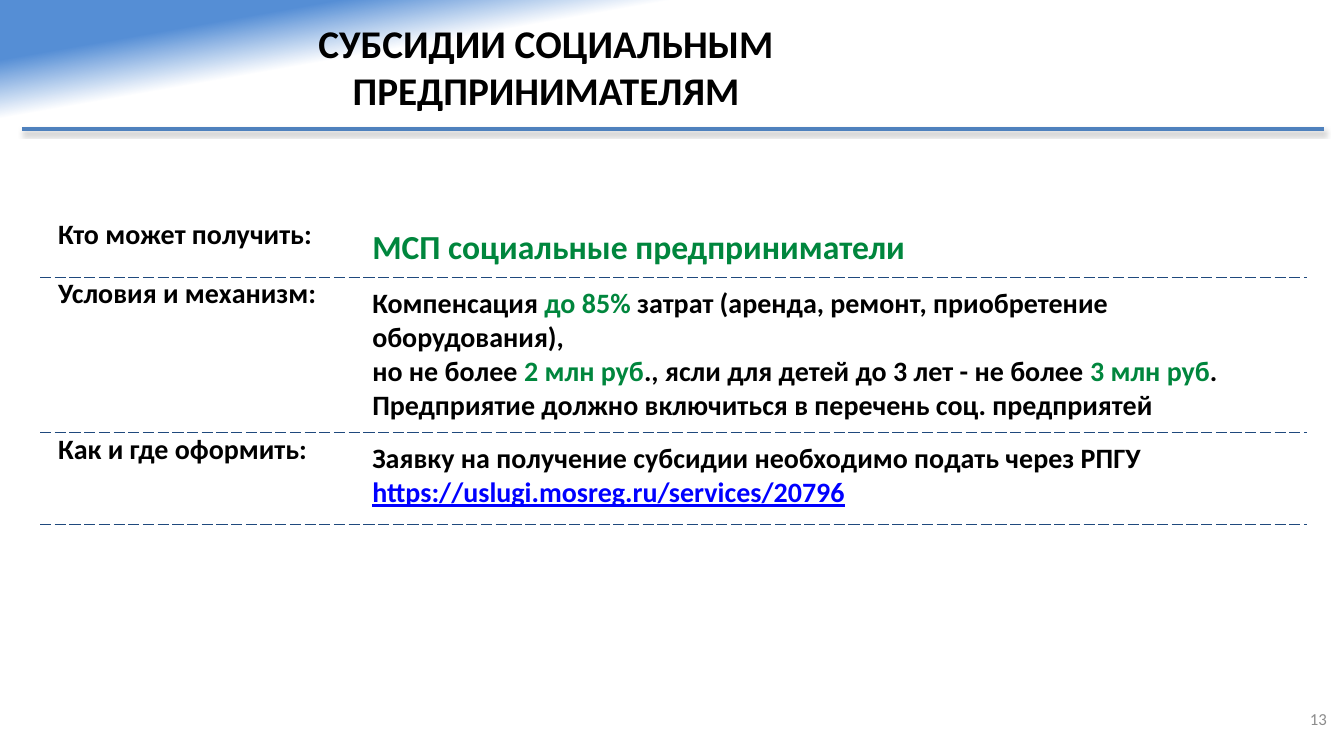
from pptx import Presentation
from pptx import util as u
from pptx.dml.color import RGBColor
from pptx.enum import shapes, text
from pptx.oxml import parse_xml
from pptx.oxml.ns import nsdecls

SCALE = 9080
BLACK, GREEN, BLUE, GREY = "000000", "00863D", "0000FF", "8C8C8C"


def px(*lengths):
    return [u.Emu(length * SCALE) for length in lengths]


def add_span(para, words, color=BLACK, **changes):
    span = para.add_run()
    span.text = words
    span.font.color.rgb = RGBColor.from_string(color)
    formats = {"name": "Calibri", "size": u.Pt(20), "bold": True} | changes
    for name, value in formats.items():
        setattr(span.font, name, value)


deck = Presentation()
deck.slide_width, deck.slide_height = px(1343, 753)
page = deck.slides.add_slide(deck.slide_layouts[5])

backdrop = page.background.fill
backdrop.gradient()
backdrop.gradient_angle = 280
for stop, (position, color) in zip(backdrop.gradient_stops, [(0.06, "558ED5"), (0.12, "FFFFFF")]):
    stop.position = position
    stop.color.rgb = RGBColor.from_string(color)

title = page.shapes.title
title.left, title.top, title.width, title.height = px(180, 14, 731, 105)
frame = title.text_frame
frame_format = {
    "word_wrap": True,
    "auto_size": text.MSO_AUTO_SIZE.NONE,
    "vertical_anchor": text.MSO_ANCHOR.TOP,
    "margin_left": 0,
    "margin_right": 0,
}
for name, value in frame_format.items():
    setattr(frame, name, value)
frame.paragraphs[0].alignment = text.PP_ALIGN.CENTER
add_span(frame.paragraphs[0], "СУБСИДИИ СОЦИАЛЬНЫМ ПРЕДПРИНИМАТЕЛЯМ", size=u.Pt(28))

rule = page.shapes.add_connector(shapes.MSO_CONNECTOR.STRAIGHT, *px(22, 129, 1323, 129))
rule.line.color.rgb = RGBColor.from_string("4F81BD")
rule.line.width = u.Pt(3)
rule._element.spPr.append(parse_xml(
    f'<a:effectLst {nsdecls("a")}><a:outerShdw blurRad="40000" dist="23000" dir="5400000" rotWithShape="0">'
    '<a:srgbClr val="000000"><a:alpha val="35000"/></a:srgbClr></a:outerShdw></a:effectLst>'))

rows = [
    (58, "Кто может получить:", [[("МСП социальные предприниматели", GREEN)]]),
    (154, "Условия и механизм:", [
        [
            ("Компенсация ", BLACK),
            ("до 85% ", GREEN),
            ("затрат (аренда, ремонт, приобретение оборудования),", BLACK),
            ("\n", BLACK),
            ("но не более ", BLACK),
            ("2 млн руб", GREEN),
            ("., ясли для детей до 3 лет - не более ", BLACK),
            ("3 млн руб", GREEN),
            (".", BLACK),
        ],
        [("Предприятие должно включиться в перечень соц. предприятей", BLACK)],
    ]),
    (92, "Как и где оформить:", [
        [("Заявку на получение субсидии необходимо подать через РПГУ", BLACK)],
        [("https://uslugi.mosreg.ru/services/20796", BLUE)],
    ]),
]

holder = page.shapes.add_table(len(rows), 2, *px(40, 218, 1266, 304))
table = holder.table
table.first_row = table.horz_banding = False
table._tbl.tblPr.find("{*}tableStyleId").text = "{2D5ABB26-0587-4C30-8999-92F81FD0307C}"
for column, width in zip(table.columns, px(314, 952)):
    column.width = width

for index, (height, label, paragraphs) in enumerate(rows):
    table.rows[index].height = px(height)[0]
    label_cell, detail_cell = table.cell(index, 0), table.cell(index, 1)

    for cell in (label_cell, detail_cell):
        cell.margin_left, cell.margin_right, cell.margin_top, cell.margin_bottom = px(18, 18, 9, 9)
        cell._tc.get_or_add_tcPr().append(parse_xml(
            f'<a:lnB {nsdecls("a")} w="6350"><a:solidFill><a:srgbClr val="1F497D"/></a:solidFill>'
            '<a:prstDash val="dash"/></a:lnB>'))
        cell.fill.background()

    para = label_cell.text_frame.paragraphs[0]
    para.alignment = text.PP_ALIGN.JUSTIFY
    para.line_spacing = u.Pt(18)
    add_span(para, label)

    size = u.Pt(24 if index == 0 else 20)
    for number, spans in enumerate(paragraphs):
        frame = detail_cell.text_frame
        para = frame.add_paragraph() if number else frame.paragraphs[0]
        for words, color in spans:
            if words == "\n":
                para.add_line_break()
            else:
                add_span(para, words, color, size=size, underline=color == BLUE)

number_box = page.shapes.add_textbox(*px(1280, 698, 59, 40))
frame = number_box.text_frame
frame.word_wrap = True
frame.vertical_anchor = text.MSO_ANCHOR.MIDDLE
frame.margin_left, frame.margin_right, frame.margin_top, frame.margin_bottom = px(13, 13, 7, 7)
frame.paragraphs[0].alignment = text.PP_ALIGN.RIGHT
add_span(frame.paragraphs[0], "13", GREY, size=u.Pt(12), bold=False)

deck.save("out.pptx")
